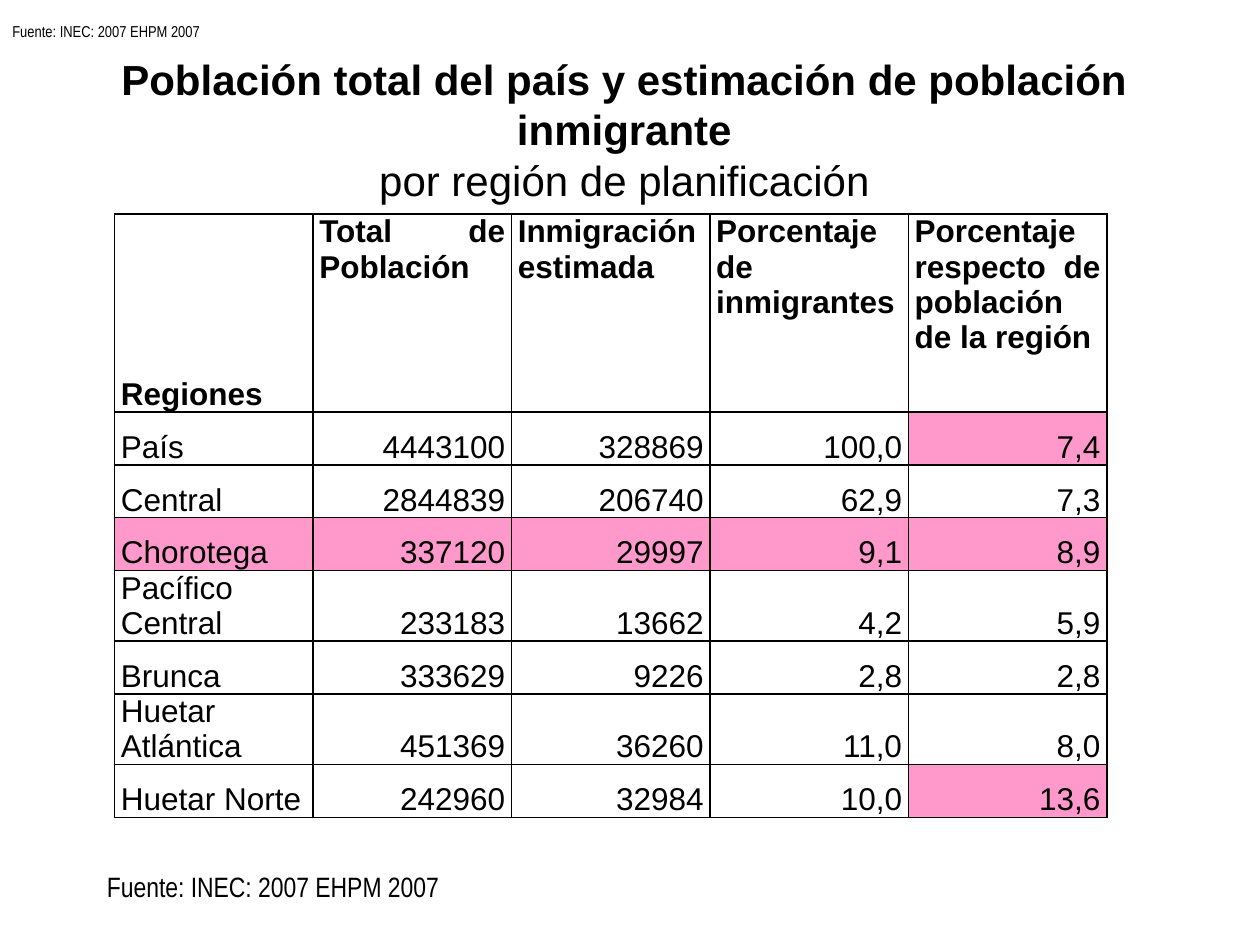
from dataclasses import dataclass

from lxml import etree
from pptx import Presentation
from pptx.dml.color import RGBColor
from pptx.enum.text import MSO_ANCHOR as Anchor, PP_ALIGN as Align
from pptx.oxml.ns import qn
from pptx.util import Inches, Pt

COLORS = {"text": "000000", "border": "000000", "highlight": "FF99CC"}
SOURCE = "Fuente: INEC: 2007 EHPM 2007"
HEADERS = ["Regiones", "Total de Población", "Inmigración estimada",
           "Porcentaje de inmigrantes",
           "Porcentaje respecto de población de la región"]


@dataclass
class Region:
    values: tuple
    marked: tuple = ()  # highlighted columns


REGIONS = [
    Region(("País", "4443100", "328869", "100,0", "7,4"), (4,)),
    Region(("Central", "2844839", "206740", "62,9", "7,3")),
    Region(("Chorotega", "337120", "29997", "9,1", "8,9"), tuple(range(5))),
    Region(("Pacífico Central", "233183", "13662", "4,2", "5,9")),
    Region(("Brunca", "333629", "9226", "2,8", "2,8")),
    Region(("Huetar Atlántica", "451369", "36260", "11,0", "8,0")),
    Region(("Huetar Norte", "242960", "32984", "10,0", "13,6"), (4,)),
]


@dataclass
class Caption:
    left: float
    top: float
    width: float
    height: float
    size: float


CAPTIONS = [Caption(0, 0, 10, 0.5, 9), Caption(0.75, 6.85, 8.43, 0.37, 16)]


def write(p, text: str, *, size: float = 18, font: str = "Arial",
          bold: bool = False, align=Align.JUSTIFY) -> None:
    p.alignment = align
    r = p.add_run()
    r.text = text
    r.font.size = Pt(size)
    r.font.name = font
    r.font.bold = bold
    r.font.color.rgb = RGBColor.from_string(COLORS["text"])


def add_box(s, left: float, top: float, width: float, height: float):
    sp = s.shapes.add_textbox(Inches(left), Inches(top),
                              Inches(width), Inches(height))
    tf = sp.text_frame
    tf.word_wrap = True
    tf.vertical_anchor = Anchor.MIDDLE
    return tf


def set_borders(cell) -> None:
    tc_pr = cell._tc.get_or_add_tcPr()
    for i, side in enumerate(("a:lnL", "a:lnR", "a:lnT", "a:lnB")):
        ln = etree.Element(qn(side), w=str(Pt(1)))
        fill = etree.SubElement(ln, qn("a:solidFill"))
        etree.SubElement(fill, qn("a:srgbClr"), val=COLORS["border"])
        tc_pr.insert(i, ln)


def fill_cell(cell, text: str, *, anchor=Anchor.BOTTOM,
              marked: bool = False, **fmt) -> None:
    cell.margin_left = cell.margin_right = Inches(0.05)
    cell.margin_top = cell.margin_bottom = 0
    cell.vertical_anchor = anchor
    if marked:
        cell.fill.solid()
        cell.fill.fore_color.rgb = RGBColor.from_string(COLORS["highlight"])
    else:
        cell.fill.background()
    set_borders(cell)
    write(cell.text_frame.paragraphs[0], text, **fmt)


def add_region_table(s) -> None:
    table = s.shapes.add_table(len(REGIONS) + 1, len(HEADERS), Inches(0.91),
                               Inches(1.7), Inches(7.87), Inches(4.51)).table
    table.horz_banding = False
    for col in table.columns:
        col.width = Inches(1.575)
    for i, row in enumerate(table.rows):
        row.height = Inches(0.42 if i else 1.57)
    for c, text in enumerate(HEADERS):
        fill_cell(table.cell(0, c), text, bold=True,
                  anchor=Anchor.TOP if c else Anchor.BOTTOM)
    for i, region in enumerate(REGIONS, start=1):
        for c, text in enumerate(region.values):
            fill_cell(table.cell(i, c), text, marked=c in region.marked,
                      align=Align.RIGHT if c else Align.JUSTIFY)


def main() -> None:
    prs = Presentation()
    prs.slide_width, prs.slide_height = Inches(10), Inches(7.5)
    s = prs.slides.add_slide(prs.slide_layouts[6])

    # Table of regions
    add_region_table(s)

    # Title
    tf = add_box(s, 0.5, 0.37, 8.91, 1.31)
    write(tf.paragraphs[0],
          "Población total del país y estimación de población inmigrante",
          size=24, bold=True, align=Align.CENTER)
    write(tf.add_paragraph(), "por región de planificación",
          size=24, align=Align.CENTER)

    # Source notes
    for cap in CAPTIONS:
        tf = add_box(s, cap.left, cap.top, cap.width, cap.height)
        write(tf.paragraphs[0], SOURCE, size=cap.size, font="Arial Narrow")

    prs.save("out.pptx")


if __name__ == "__main__":
    main()
